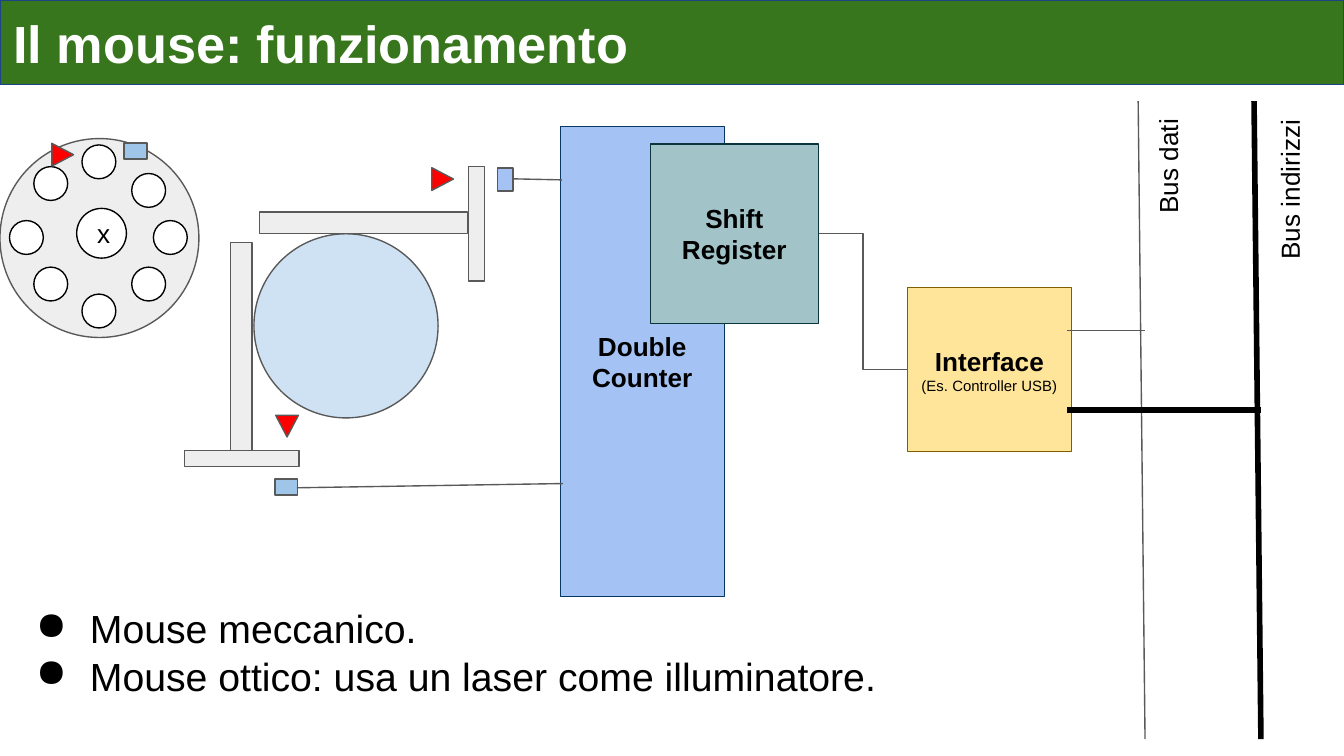
from pptx import Presentation
from pptx.dml.color import RGBColor
from pptx.enum.shapes import MSO_CONNECTOR as Wire, MSO_SHAPE as Shape
from pptx.enum.text import MSO_ANCHOR as Anchor, PP_ALIGN as Align
from pptx.oxml.ns import qn
from pptx.util import Cm, Pt
from lxml.etree import SubElement


class Theme:
    font = "Arial"
    white = RGBColor.from_string("FFFFFF")
    black = RGBColor.from_string("000000")
    gray = RGBColor.from_string("595959")
    light = RGBColor.from_string("EEEEEE")
    red = RGBColor.from_string("FF0000")
    green = RGBColor.from_string("38761D")
    navy = RGBColor.from_string("1C4587")
    ball = RGBColor.from_string("CFE2F3")
    sensor = RGBColor.from_string("9FC5E8")
    counter = RGBColor.from_string("A4C2F4")
    counter_edge = RGBColor.from_string("073763")
    register = RGBColor.from_string("A2C4C9")
    register_edge = RGBColor.from_string("0C343D")
    interface = RGBColor.from_string("FFE599")
    interface_edge = RGBColor.from_string("7F6000")
    title_size, body_size, label_size, note_size = Pt(28), Pt(21), Pt(14), Pt(8)
    thin, thick = Pt(0.75), Pt(3)
    inset = Cm(0.25)


def write_text(box, spans, align, size=Theme.label_size, bold=False):
    """Put the spans, one run each, into a single paragraph."""
    frame = box.text_frame
    frame.word_wrap = True
    frame.margin_left = frame.margin_right = Theme.inset
    frame.margin_top = frame.margin_bottom = Theme.inset
    para = frame.paragraphs[0]
    para.alignment = align
    for text in spans:
        span = para.add_run()
        span.text = text
        span.font.name = Theme.font
        span.font.size = size
        span.font.bold = bold
        span.font.color.rgb = Theme.black


def add_figure(kind, left, top, width, height, fill, edge=Theme.gray, turn=0):
    figure = page.shapes.add_shape(kind, Cm(left), Cm(top), Cm(width), Cm(height))
    figure.shadow.inherit = False
    figure.rotation = turn
    figure.fill.solid()
    figure.fill.fore_color.rgb = fill
    figure.line.color.rgb = edge
    figure.line.width = Theme.thin
    return figure


deck = Presentation()
deck.slide_width, deck.slide_height = Cm(25.4), Cm(14.29)
page = deck.slides.add_slide(deck.slide_layouts[5])

# Title bar
title = page.shapes.title
title.left, title.top, title.width, title.height = Cm(0), Cm(0), Cm(25.4), Cm(1.6)
title.fill.solid()
title.fill.fore_color.rgb = Theme.green
title.line.color.rgb = Theme.navy
title.line.width = Theme.thin
title.text_frame.text = "Il mouse: funzionamento"
title.text_frame.vertical_anchor = Anchor.MIDDLE
para = title.text_frame.paragraphs[0]
para.alignment = Align.LEFT
font = para.runs[0].font
font.name, font.size, font.bold = Theme.font, Theme.title_size, True
font.color.rgb = Theme.white

# Bullets
body = page.shapes.add_textbox(Cm(0.18), Cm(11.28), Cm(25.04), Cm(1.6))
body.text_frame.word_wrap = True
body.text_frame.text = "Mouse meccanico.\nMouse ottico: usa un laser come illuminatore."
for para in body.text_frame.paragraphs:
    para.line_spacing = 1.02
    font = para.runs[0].font
    font.name, font.size = Theme.font, Theme.body_size
    font.color.rgb = Theme.black
    properties = para._p.get_or_add_pPr()
    properties.set("marL", str(Cm(1.27)))
    properties.set("indent", str(-Cm(1.02)))
body.text_frame.paragraphs[0].space_before = Pt(7)
for para in body.text_frame.paragraphs:
    SubElement(para._p.pPr, qn("a:buChar")).set("char", "●")

# Ball, then a roller, slotted disc, lamp and sensor for each axis
add_figure(Shape.OVAL, 4.8, 4.42, 3.48, 3.48, Theme.ball)
axes = [
    (0, 90, Theme.counter, [(4.9, 4.01), (8.86, 3.15), (8.15, 3.18), (9.4, 3.18)]),
    (90, 180, Theme.sensor, [(2.59, 6.35), (4.42, 7.59), (5.21, 7.85), (5.26, 8.99)]),
]
for turn, lamp_turn, sensor_fill, (roller, disc, lamp, sensor) in axes:
    add_figure(Shape.RECTANGLE, *roller, 3.94, 0.41, Theme.light, turn=turn)
    add_figure(Shape.RECTANGLE, *disc, 0.3, 2.16, Theme.light, turn=turn)
    add_figure(Shape.ISOSCELES_TRIANGLE, *lamp, 0.43, 0.41, Theme.red, turn=lamp_turn)
    add_figure(Shape.RECTANGLE, *sensor, 0.3, 0.43, sensor_fill, turn=turn)

# Front view of the slotted disc
add_figure(Shape.OVAL, 0, 2.62, 3.76, 3.76, Theme.light)
holes = [(1.55, 2.74), (1.55, 5.56), (0.18, 4.17), (2.9, 4.17),
         (0.64, 3.15), (0.64, 5.05), (2.49, 5.05), (2.49, 3.28)]
for left, top in holes:
    add_figure(Shape.OVAL, left, top, 0.64, 0.64, Theme.white, Theme.black)
hub = add_figure(Shape.OVAL, 1.45, 3.94, 0.94, 0.94, Theme.white, Theme.black)
write_text(hub, ["x"], Align.CENTER)
add_figure(Shape.RECTANGLE, 2.41, 2.64, 0.3, 0.43, Theme.sensor, turn=90)
add_figure(Shape.ISOSCELES_TRIANGLE, 0.97, 2.72, 0.43, 0.41, Theme.red, turn=90)

# Circuit blocks
blocks = [
    (["Double Counter"], (10.59, 2.39, 3.1, 8.89), Theme.counter, Theme.counter_edge),
    (["Interface ", "(Es. Controller USB)"], (17.15, 5.44, 3.1, 3.1),
     Theme.interface, Theme.interface_edge),
    (["Shift Register"], (12.29, 2.72, 3.18, 3.4), Theme.register, Theme.register_edge),
]
for spans, place, fill, edge in blocks:
    block = add_figure(Shape.RECTANGLE, *place, fill, edge)
    write_text(block, spans, Align.CENTER, bold=True)
    for note in block.text_frame.paragraphs[0].runs[1:]:
        note.font.size, note.font.bold = Theme.note_size, False

# Wires and buses
wires = [
    (Wire.STRAIGHT, 9.68, 3.38, 10.62, 3.4, Theme.gray, Theme.thin),
    (Wire.STRAIGHT, 5.61, 9.22, 10.64, 9.14, Theme.gray, Theme.thin),
    (Wire.ELBOW, 15.47, 4.42, 17.15, 6.99, Theme.gray, Theme.thin),
    (Wire.STRAIGHT, 21.51, 1.91, 21.64, 13.97, Theme.gray, Theme.thin),
    (Wire.STRAIGHT, 23.7, 1.91, 23.83, 13.97, Theme.black, Theme.thick),
    (Wire.STRAIGHT, 20.17, 7.75, 23.83, 7.75, Theme.black, Theme.thick),
    (Wire.STRAIGHT, 20.17, 6.25, 21.64, 6.25, Theme.gray, Theme.thin),
]
for kind, x1, y1, x2, y2, color, width in wires:
    wire = page.shapes.add_connector(kind, Cm(x1), Cm(y1), Cm(x2), Cm(y2))
    wire.line.color.rgb = color
    wire.line.width = width
    SubElement(wire._element.spPr, qn("a:effectLst"))

# Bus labels
for text, left, top, width in [("Bus dati", 20.52, 3, 2.97),
                               ("Bus indirizzi", 22.61, 3.23, 3.4)]:
    label = page.shapes.add_textbox(Cm(left), Cm(top), Cm(width), Cm(0.97))
    label.rotation = 270
    write_text(label, [text], Align.RIGHT)

deck.save("out.pptx")
